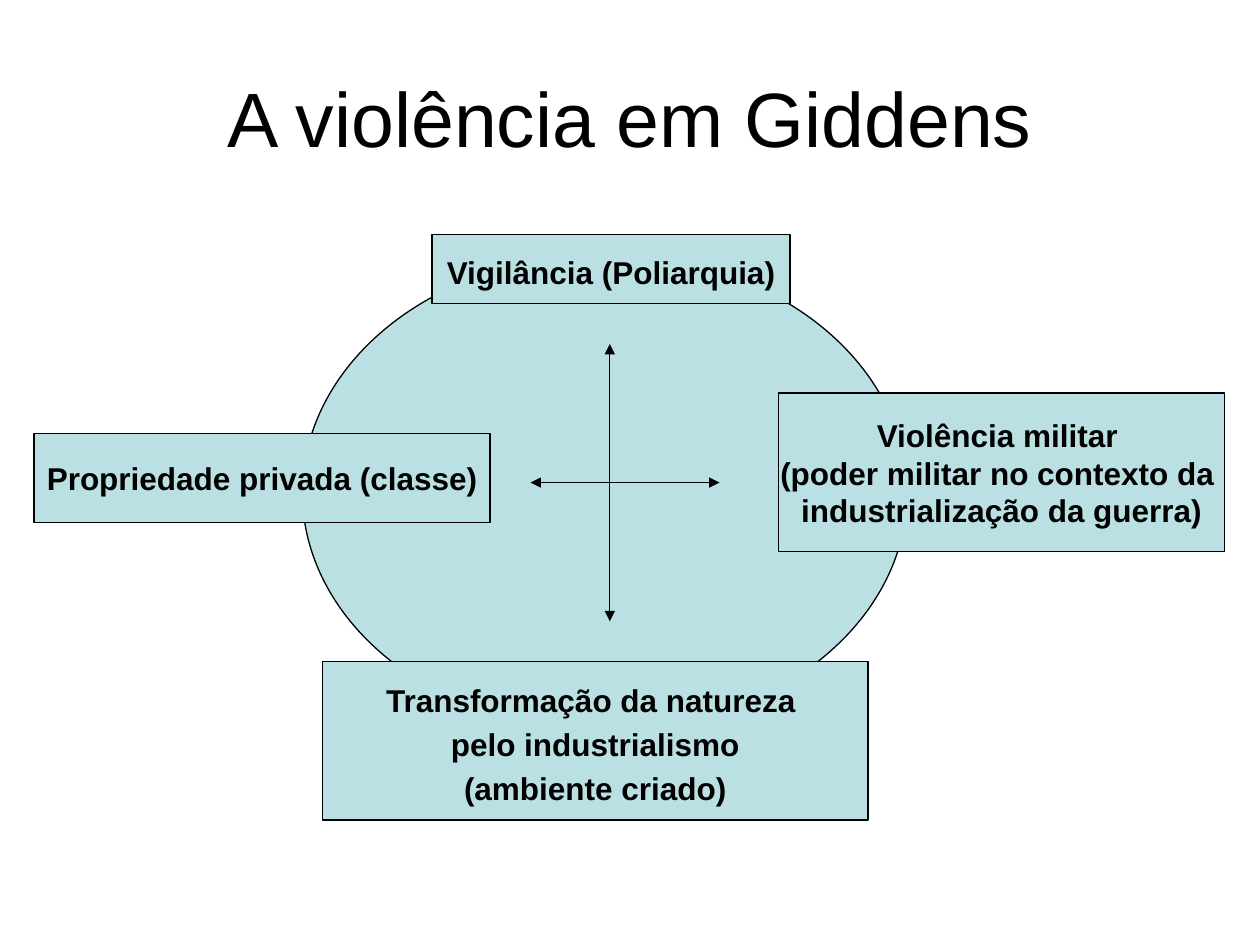
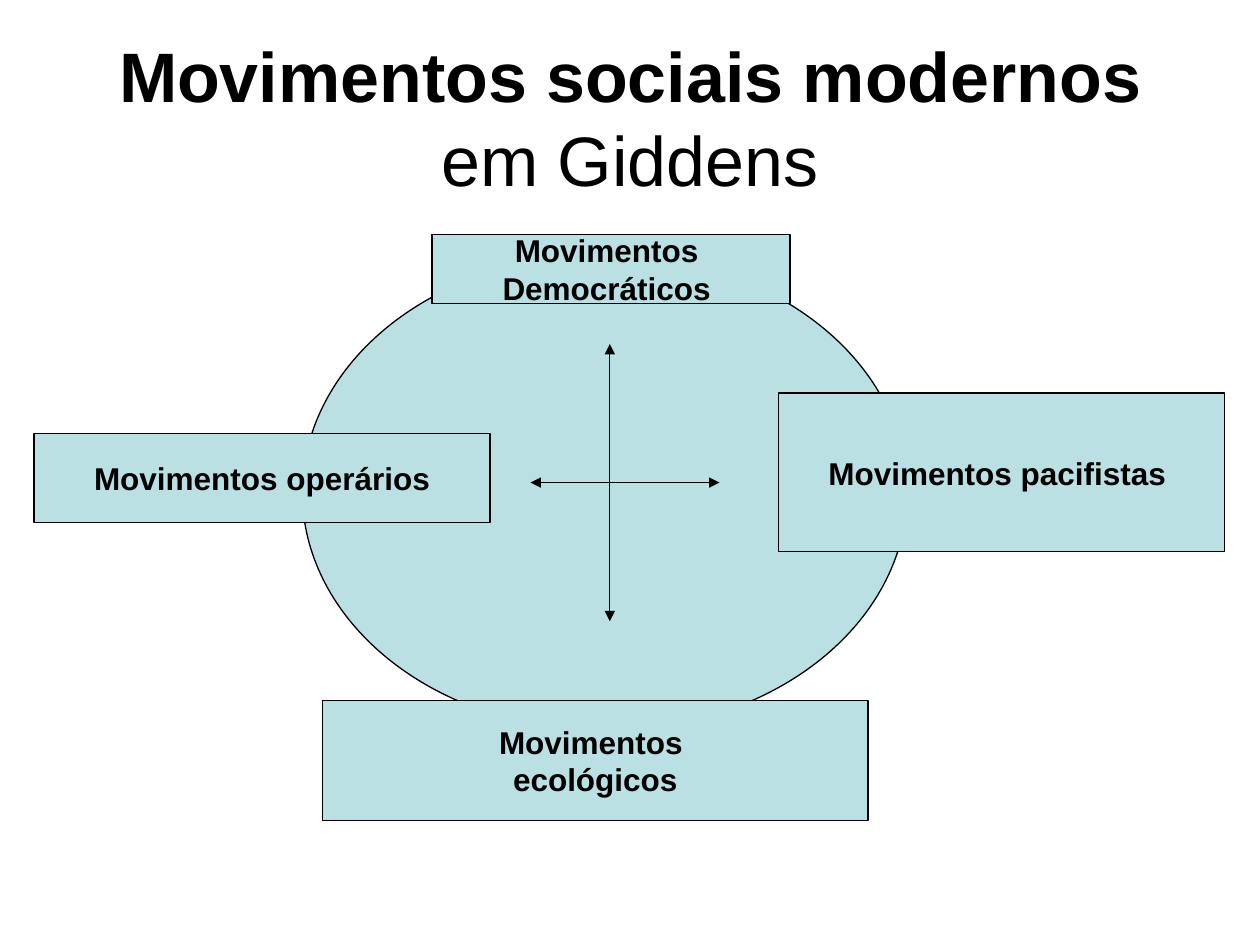
from dataclasses import dataclass

from lxml import etree
from pptx import Presentation
from pptx.dml.color import RGBColor
from pptx.enum.shapes import MSO_CONNECTOR, MSO_SHAPE
from pptx.enum.text import MSO_ANCHOR, MSO_AUTO_SIZE, PP_ALIGN
from pptx.oxml.ns import qn
from pptx.util import Pt

STRAIGHT = MSO_CONNECTOR.STRAIGHT
ELLIPSE = MSO_SHAPE.OVAL
RECTANGLE = MSO_SHAPE.RECTANGLE
MIDDLE = MSO_ANCHOR.MIDDLE
NO_FIT = MSO_AUTO_SIZE.NONE
CENTER = PP_ALIGN.CENTER

COLORS = {"ink": "000000", "panel": "BBE0E3", "page": "FFFFFF"}
FONT = "Arial"
LABEL_SIZE = 18
LINE_WIDTH = 0.75
INSET = 3.6
TITLE_ONLY = 5


@dataclass(frozen=True)
class Frame:
    left: float
    top: float
    width: float
    height: float


@dataclass(frozen=True)
class Span:
    text: str
    bold: bool = False


@dataclass(frozen=True)
class Label:
    frame: Frame
    lines: tuple[str, ...]
    space_before: float = 0
    drop: float = 0


@dataclass(frozen=True)
class Diagram:
    title: tuple[Span, ...]
    title_size: float
    labels: tuple[Label, ...]


TITLE = Frame(36, 21.6, 648, 90)
CIRCLE = Frame(172.8, 145.44, 345.6, 272.16)
TOP = Frame(246.96, 133.92, 204.48, 39.6)
LEFT = Frame(19.44, 247.68, 260.64, 51.12)
RIGHT = Frame(444.96, 224.64, 254.88, 90.72)
BOTTOM_TALL = Frame(184.32, 378, 311.76, 90.72)
BOTTOM_SHORT = Frame(184.32, 400.32, 311.76, 68.4)
HUB = (348.48, 275.76)
ARROW_REACHES = ((0, 79.2), (0, -79.2), (62.64, 0), (-45.36, 0))

DIAGRAMS = (
    Diagram(
        (Span("A violência em Giddens"),),
        44,
        (
            Label(
                BOTTOM_TALL,
                ("Transformação da natureza ", "pelo industrialismo", "(ambiente criado)"),
                space_before=3.6,
                drop=3.6,
            ),
            Label(LEFT, ("Propriedade privada (classe)",)),
            Label(TOP, ("Vigilância (Poliarquia)",), drop=3.6),
            Label(
                RIGHT,
                (
                    "Violência militar ",
                    "(poder militar no contexto da ",
                    "industrialização da guerra)",
                ),
            ),
        ),
    ),
    Diagram(
        (Span("Movimentos sociais modernos ", bold=True), Span("em Giddens")),
        40,
        (
            Label(BOTTOM_SHORT, ("Movimentos ", "ecológicos")),
            Label(LEFT, ("Movimentos operários",)),
            Label(TOP, ("Movimentos ", "Democráticos ")),
            Label(RIGHT, ("Movimentos pacifistas ",)),
        ),
    ),
)


def color(name: str) -> RGBColor:
    return RGBColor.from_string(COLORS[name])


def style_font(font, size: float, bold: bool) -> None:
    font.name = FONT
    font.size = Pt(size)
    font.bold = bold
    font.color.rgb = color("ink")


def style_line(line) -> None:
    line.color.rgb = color("ink")
    line.width = Pt(LINE_WIDTH)


def set_title(page, spans: tuple[Span, ...], size: float) -> None:
    title = page.shapes.title
    title.left, title.top = Pt(TITLE.left), Pt(TITLE.top)
    title.width, title.height = Pt(TITLE.width), Pt(TITLE.height)
    text_frame = title.text_frame
    text_frame.word_wrap = True
    text_frame.auto_size = NO_FIT
    text_frame.vertical_anchor = MIDDLE
    para = text_frame.paragraphs[0]
    para.alignment = CENTER
    for span in spans:
        run = para.add_run()
        run.text = span.text
        style_font(run.font, size, span.bold)


def add_panel(page, preset, frame: Frame):
    panel = page.shapes.add_shape(
        preset, Pt(frame.left), Pt(frame.top), Pt(frame.width), Pt(frame.height)
    )
    panel.shadow.inherit = False
    panel.fill.solid()
    panel.fill.fore_color.rgb = color("panel")
    style_line(panel.line)
    return panel


def add_label(page, label: Label) -> None:
    text_frame = add_panel(page, RECTANGLE, label.frame).text_frame
    text_frame.word_wrap = False
    text_frame.vertical_anchor = MIDDLE
    text_frame.margin_top = Pt(INSET + label.drop)
    text_frame.margin_bottom = Pt(INSET)
    text_frame.text = "\n".join(label.lines)
    for index, para in enumerate(text_frame.paragraphs):
        para.alignment = CENTER
        if index and label.space_before:
            para.space_before = Pt(label.space_before)
        for run in para.runs:
            style_font(run.font, LABEL_SIZE, True)


def add_arrow(page, reach: tuple[float, float]) -> None:
    start_x, start_y = HUB
    arrow = page.shapes.add_connector(
        STRAIGHT,
        Pt(start_x),
        Pt(start_y),
        Pt(start_x + reach[0]),
        Pt(start_y + reach[1]),
    )
    style_line(arrow.line)
    properties = arrow.element.spPr
    etree.SubElement(properties.find(qn("a:ln")), qn("a:tailEnd"), type="triangle")
    etree.SubElement(properties, qn("a:effectLst"))


def add_diagram(deck, diagram: Diagram) -> None:
    page = deck.slides.add_slide(deck.slide_layouts[TITLE_ONLY])
    page.background.fill.solid()
    page.background.fill.fore_color.rgb = color("page")
    set_title(page, diagram.title, diagram.title_size)
    add_panel(page, ELLIPSE, CIRCLE)
    for label in diagram.labels:
        add_label(page, label)
    for reach in ARROW_REACHES:
        add_arrow(page, reach)


def main() -> None:
    deck = Presentation()
    deck.slide_width, deck.slide_height = Pt(720), Pt(540)
    for diagram in DIAGRAMS:
        add_diagram(deck, diagram)
    deck.save("out.pptx")


if __name__ == "__main__":
    main()
